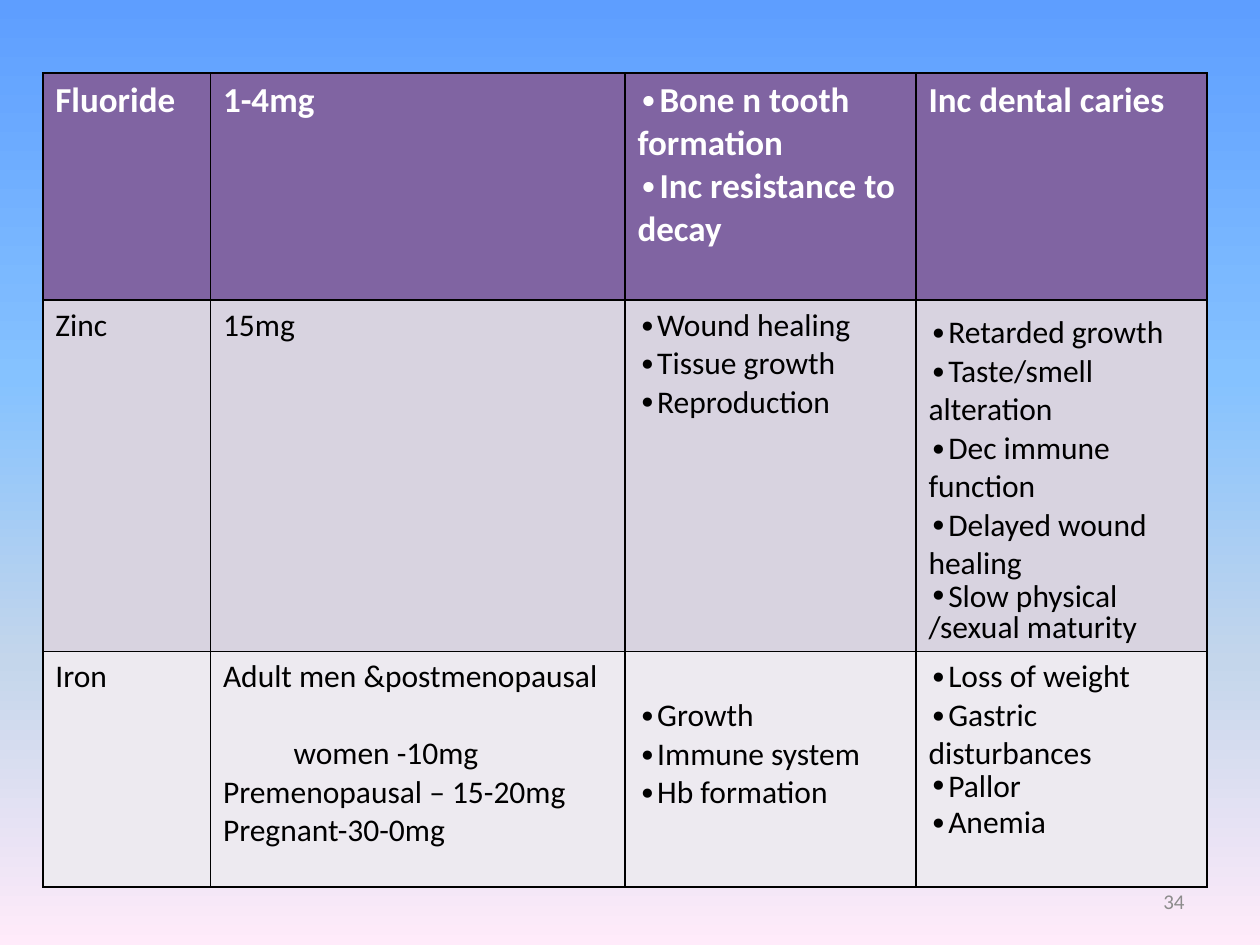
"""Builds a slide with a table of minerals, daily needs, functions and deficiency signs."""
from dataclasses import dataclass

from lxml import etree
from pptx import Presentation, util as u
from pptx.dml.color import RGBColor
from pptx.enum import text as t
from pptx.oxml.ns import qn


@dataclass(frozen=True)
class Line:
    words: str
    bullet: bool = False
    spacing: float = 1.0
    indent: float = 0
    before: float = 0


@dataclass(frozen=True)
class Mineral:
    cells: tuple[list[Line], ...]
    height: float
    fill: str
    color: str = "000000"
    size: float = 18
    bold: bool = False
    function_top: float = 0.05


def bullets(*words: str, **spacings: float) -> list[Line]:
    return [Line(item, True, spacings.get(f"line{number}", 1.0))
            for number, item in enumerate(words, 1)]


MINERALS = [
    Mineral(
        ([Line("Fluoride")], [Line("1-4mg")],
         bullets("Bone n tooth formation", "Inc resistance to decay"),
         [Line("Inc dental caries")]),
        1.8, "8064A2", "FFFFFF", 20, True),
    Mineral(
        ([Line("Zinc")], [Line("15mg")],
         bullets("Wound healing", "Tissue growth", "Reproduction"),
         bullets("Retarded growth", "Taste/smell alteration", "Dec immune function",
                 "Delayed wound healing", "Slow physical /sexual maturity",
                 line1=1.2, line5=0.8)),
        2.79, "D8D3E0"),
    Mineral(
        ([Line("Iron")],
         [Line("Adult men &postmenopausal"),
          Line("women -10mg", indent=0.56, before=22),
          Line("Premenopausal – 15-20mg"), Line("Pregnant-30-0mg")],
         bullets("Growth", "Immune system", "Hb formation"),
         bullets("Loss of weight", "Gastric disturbances", "Pallor", "Anemia", line3=0.8)),
        1.87, "EDEAF0", function_top=0.36),
]
COLUMN_WIDTHS = [1.33, 3.29, 2.31, 2.31]
FUNCTION_COLUMN = 2
FONT = "Calibri"
SKY = [(0, "5E9EFF"), (40, "85C2FF"), (70, "C4D6EB"), (100, "FFEBFA")]


def rgb(value: str) -> RGBColor:
    return RGBColor.from_string(value)


def write(frame, lines: list[Line], *, size: float, color: str, bold: bool = False,
          align=t.PP_ALIGN.LEFT) -> None:
    frame.word_wrap = True
    for number, line in enumerate(lines):
        paragraph = frame.paragraphs[0] if number == 0 else frame.add_paragraph()
        paragraph.alignment = align
        paragraph.line_spacing = line.spacing
        paragraph.space_before = u.Pt(line.before)
        run = paragraph.add_run()
        run.text = line.words
        run.font.name = FONT
        run.font.size = u.Pt(size)
        run.font.bold = bold
        run.font.color.rgb = rgb(color)
        properties = paragraph._p.get_or_add_pPr()
        properties.set("marL", str(u.Inches(line.indent)))
        properties.set("indent", "0")
        if line.bullet:
            etree.SubElement(properties, qn("a:buFont")).set("typeface", FONT)
            etree.SubElement(properties, qn("a:buChar")).set("char", "∙")


def add_solid(parent, color: str) -> None:
    solid = etree.SubElement(parent, qn("a:solidFill"))
    etree.SubElement(solid, qn("a:srgbClr")).set("val", color)


def add_borders(cell, color: str, width: float) -> None:
    properties = cell._tc.get_or_add_tcPr()
    for side in "LRTB":
        border = etree.SubElement(properties, qn(f"a:ln{side}"), w=str(u.Pt(width)))
        add_solid(border, color)


def paint_background(slide, stops: list[tuple[int, str]]) -> None:
    fill = slide.background.fill
    fill.gradient()
    fill.gradient_angle = 270
    stop_list = next(slide._element.iter(qn("a:gsLst")))
    for stop in list(stop_list):
        stop_list.remove(stop)
    for position, color in stops:
        stop = etree.SubElement(stop_list, qn("a:gs"), pos=str(position * 1000))
        etree.SubElement(stop, qn("a:srgbClr")).set("val", color)


def add_minerals(slide, minerals: list[Mineral]) -> None:
    table = slide.shapes.add_table(
        len(minerals), len(COLUMN_WIDTHS), u.Inches(0.34), u.Inches(0.58),
        u.Inches(sum(COLUMN_WIDTHS)), u.Inches(sum(m.height for m in minerals))).table
    for column, width in zip(table.columns, COLUMN_WIDTHS):
        column.width = u.Inches(width)
    for row, mineral in zip(table.rows, minerals):
        row.height = u.Inches(mineral.height)
        for cell, lines in zip(row.cells, mineral.cells):
            add_borders(cell, "000000", 1)
            cell.fill.solid()
            cell.fill.fore_color.rgb = rgb(mineral.fill)
            write(cell.text_frame, lines, size=mineral.size, color=mineral.color,
                  bold=mineral.bold)
        row.cells[FUNCTION_COLUMN].margin_top = u.Inches(mineral.function_top)


def add_page_number(slide, number: str) -> None:
    frame = slide.shapes.add_textbox(
        u.Inches(7.17), u.Inches(6.95), u.Inches(2.33), u.Inches(0.4)).text_frame
    frame.vertical_anchor = t.MSO_ANCHOR.MIDDLE
    write(frame, [Line(number)], size=12, color="8C8C8C", align=t.PP_ALIGN.RIGHT)


def main() -> None:
    deck = Presentation()
    deck.slide_width, deck.slide_height = u.Inches(10), u.Inches(7.5)
    slide = deck.slides.add_slide(deck.slide_layouts[6])
    paint_background(slide, SKY)
    add_minerals(slide, MINERALS)
    add_page_number(slide, "34")
    deck.save("out.pptx")


if __name__ == "__main__":
    main()
